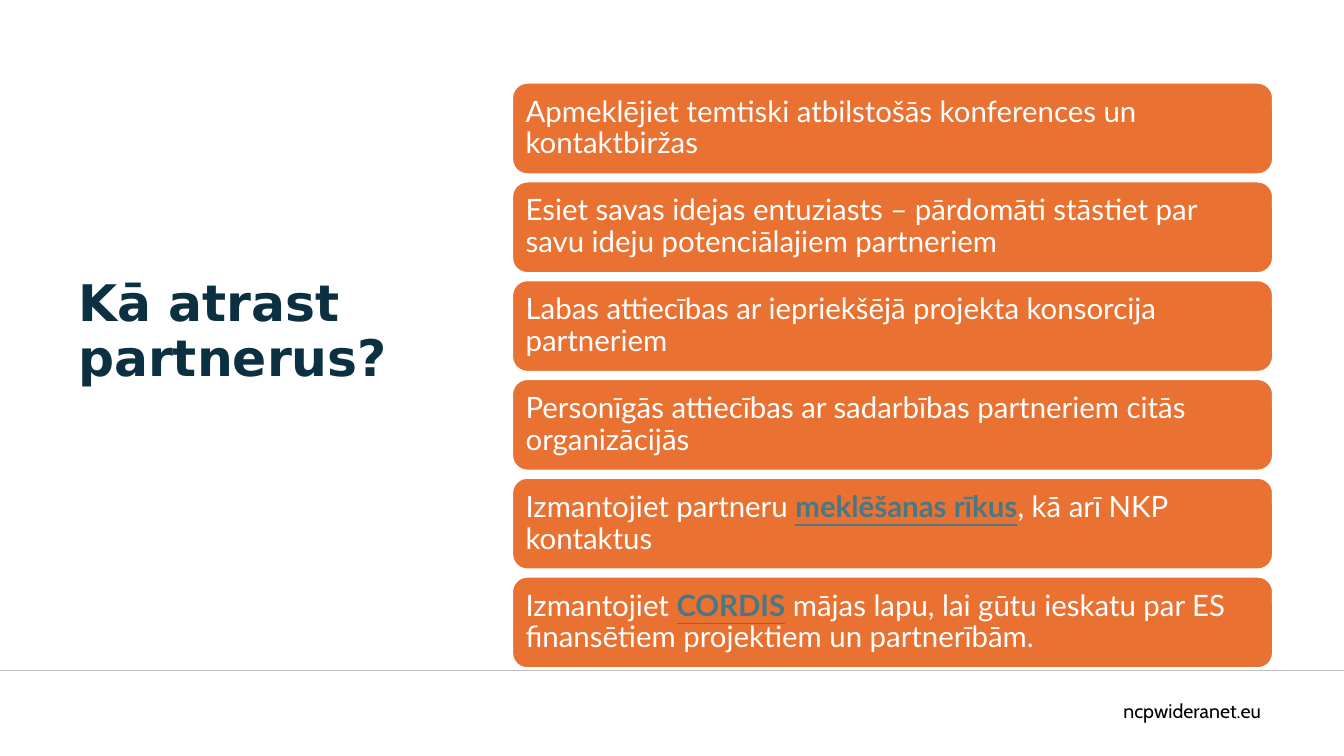
"""Build the slide on finding project partners."""
from dataclasses import dataclass

from pptx import Presentation
from pptx.dml.color import RGBColor
from pptx.enum import shapes, text
from pptx.oxml import ns
from pptx.slide import Slide
from pptx.text.text import TextFrame
from pptx.util import Pt
from lxml import etree

NAVY = RGBColor(0x0B, 0x30, 0x41)
ORANGE = RGBColor(0xE9, 0x71, 0x32)
TEAL = RGBColor(0x46, 0x78, 0x86)
GREY = RGBColor(0xBF, 0xBF, 0xBF)
WHITE = RGBColor(0xFF, 0xFF, 0xFF)
BLACK = RGBColor(0, 0, 0)

PAGE_WIDTH, PAGE_HEIGHT = 960, 540
RULE_Y = 478.8
CARD_LEFT, CARD_TOP, CARD_WIDTH, CARD_HEIGHT = 365.76, 59.04, 543.6, 65.52
CARD_PITCH = 70.56


@dataclass(frozen=True)
class Span:
    words: str
    is_key: bool = False


@dataclass(frozen=True)
class Style:
    font: str
    size: float
    color: RGBColor
    bold: bool = False
    align: text.PP_ALIGN = text.PP_ALIGN.LEFT
    anchor: text.MSO_ANCHOR = text.MSO_ANCHOR.MIDDLE
    spacing: float = 0.9
    inset_x: float = 6.5
    inset_y: float = 6.5


TITLE = Style("DejaVu Sans", 36, NAVY, bold=True, inset_x=5.4, inset_y=2.7)
ADVICE = Style("Lato", 21, WHITE)
FOOTER = Style("Cabin", 14, BLACK, align=text.PP_ALIGN.RIGHT,
               anchor=text.MSO_ANCHOR.TOP, spacing=1.0, inset_x=7.2, inset_y=3.6)

TIPS: list[list[Span]] = [
    [Span("Apmeklējiet temtiski atbilstošās konferences un kontaktbiržas")],
    [Span("Esiet savas idejas entuziasts – pārdomāti stāstiet par savu ideju "
          "potenciālajiem partneriem")],
    [Span("Labas attiecības ar iepriekšējā projekta konsorcija partneriem")],
    [Span("Personīgās attiecības ar sadarbības partneriem citās organizācijās")],
    [Span("Izmantojiet partneru "), Span("meklēšanas rīkus", True),
     Span(", kā arī NKP kontaktus")],
    [Span("Izmantojiet "), Span("CORDIS", True),
     Span(" mājas lapu, lai gūtu ieskatu par ES finansētiem projektiem un partnerībām.")],
]


def write(frame: TextFrame, spans: list[Span], style: Style) -> None:
    frame.word_wrap = True
    frame.vertical_anchor = style.anchor
    frame.margin_left = frame.margin_right = Pt(style.inset_x)
    frame.margin_top = frame.margin_bottom = Pt(style.inset_y)
    para = frame.paragraphs[0]
    para.alignment = style.align
    para.line_spacing = style.spacing
    para.font.name = style.font
    para.font.size = Pt(style.size)
    para.font.bold = style.bold
    para.font.color.rgb = style.color
    for span in spans:
        run = para.add_run()
        run.text = span.words
        if span.is_key:
            run.font.bold = True
            run.font.underline = True
            run.font.color.rgb = TEAL


def add_label(page: Slide, words: str, style: Style,
              left: float, top: float, width: float, height: float) -> None:
    box = page.shapes.add_textbox(Pt(left), Pt(top), Pt(width), Pt(height))
    write(box.text_frame, [Span(words)], style)


def add_card(page: Slide, spans: list[Span], top: float) -> None:
    card = page.shapes.add_shape(shapes.MSO_SHAPE.ROUNDED_RECTANGLE, Pt(CARD_LEFT),
                                 Pt(top), Pt(CARD_WIDTH), Pt(CARD_HEIGHT))
    card.shadow.inherit = False
    card.fill.solid()
    card.fill.fore_color.rgb = ORANGE
    card.line.color.rgb = WHITE
    card.line.width = Pt(1.5)
    write(card.text_frame, spans, ADVICE)


def add_rule(page: Slide) -> None:
    rule = page.shapes.add_connector(shapes.MSO_CONNECTOR.STRAIGHT, Pt(0), Pt(RULE_Y),
                                     Pt(PAGE_WIDTH), Pt(RULE_Y))
    rule.line.color.rgb = GREY
    rule.line.width = Pt(1)
    etree.SubElement(rule._element.spPr, ns.qn("a:effectLst"))


def main() -> None:
    deck = Presentation()
    deck.slide_width, deck.slide_height = Pt(PAGE_WIDTH), Pt(PAGE_HEIGHT)
    page = deck.slides.add_slide(deck.slide_layouts[6])
    add_label(page, "ncpwideranet.eu", FOOTER, 427.68, 495.36, 480.24, 24.48)
    add_rule(page)
    add_label(page, "Kā atrast partnerus?", TITLE, 50.4, 174.24, 249.12, 126.72)
    for index, spans in enumerate(TIPS):
        add_card(page, spans, CARD_TOP + index * CARD_PITCH)
    deck.save("out.pptx")


if __name__ == "__main__":
    main()
